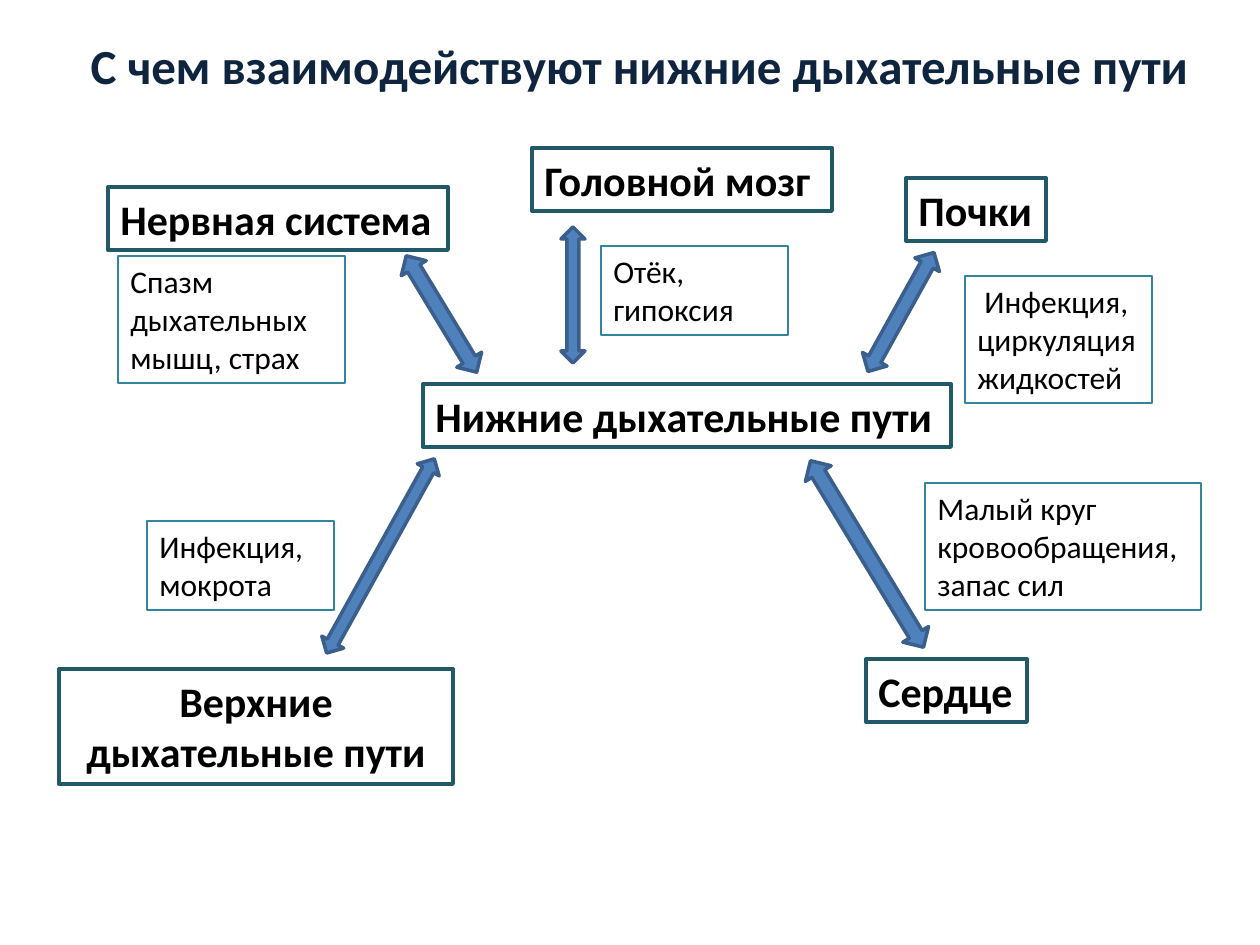
from pptx import Presentation
from pptx.dml.color import RGBColor
from pptx.enum.shapes import MSO_SHAPE
from pptx.enum.text import MSO_ANCHOR, MSO_AUTO_SIZE, PP_ALIGN
from pptx.util import Emu, Pt

ARROW = MSO_SHAPE.UP_DOWN_ARROW
TOP = MSO_ANCHOR.TOP
GROW = MSO_AUTO_SIZE.SHAPE_TO_FIT_TEXT
LEFT, CENTER = PP_ALIGN.LEFT, PP_ALIGN.CENTER

PX_PER_INCH = 126
PAGE_SIZE = (1260, 945)

# Text and line formats
TITLE = {"size": Pt(28), "bold": True, "name": "Calibri"}
ORGAN = {"size": Pt(24), "bold": True, "name": "Calibri"}
NOTE = {"size": Pt(18), "bold": False, "name": "Calibri"}
ORGAN_LINE = ("215968", 2.25)
NOTE_LINE = ("31859C", 0.75)
ARROW_LINE = ("3A5F8C", 2)

# Organs: text, (left, top, width, height), alignment
ORGANS = [
    ("Нижние дыхательные пути", (423, 384, 528, 63), LEFT),
    ("Нервная система", (108, 187, 340, 63), LEFT),
    ("Верхние дыхательные пути", (59, 669, 394, 115), CENTER),
    ("Сердце", (866, 659, 161, 63), LEFT),
    ("Почки", (906, 178, 140, 63), LEFT),
    ("Головной мозг", (532, 148, 300, 63), LEFT),
]

# Notes beside the arrows
NOTES = [
    ("Спазм дыхательных мышц, страх", (118, 256, 227, 127)),
    ("Инфекция, мокрота", (147, 521, 187, 89)),
    (" Инфекция, циркуляция жидкостей", (965, 276, 187, 127)),
    ("Малый круг кровообращения, запас сил", (925, 483, 276, 127)),
    ("Отёк, гипоксия", (601, 246, 187, 89)),
]

# Arrows: place before rotation, rotation in degrees
ARROWS = [
    ((427, 246, 29, 136), -31.2),
    ((368, 445, 25, 222), 29),
    ((852, 445, 30, 218), -31.2),
    ((887, 244, 28, 136), 29),
    ((561, 227, 24, 136), 0),
]


def px(length):
    return Emu(round(length * 914400 / PX_PER_INCH))


def colour(value):
    return RGBColor.from_string(value)


def set_line(shape, line):
    shape.line.color.rgb = colour(line[0])
    shape.line.width = Pt(line[1])


def write(box, text, style, text_colour, align):
    frame = box.text_frame
    frame.word_wrap = True
    frame.auto_size = GROW
    frame.vertical_anchor = TOP
    para = frame.paragraphs[0]
    para.alignment = align
    span = para.add_run()
    span.text = text
    for name, value in style.items():
        setattr(span.font, name, value)
    span.font.color.rgb = colour(text_colour)


def add_title(page, text, place):
    title = page.shapes.title
    title.left, title.top, title.width, title.height = map(px, place)
    write(title, text, TITLE, "0F243E", LEFT)


def add_box(page, text, place, style, line, align=LEFT):
    box = page.shapes.add_textbox(*map(px, place))
    set_line(box, line)
    write(box, text, style, "000000", align)


def add_arrow(page, place, rotation):
    arrow = page.shapes.add_shape(ARROW, *map(px, place))
    arrow.rotation = rotation
    arrow.shadow.inherit = False
    arrow.fill.solid()
    arrow.fill.fore_color.rgb = colour("4F81BD")
    set_line(arrow, ARROW_LINE)


def main():
    deck = Presentation()
    deck.slide_width, deck.slide_height = map(px, PAGE_SIZE)
    page = deck.slides.add_slide(deck.slide_layouts[5])

    add_title(page, "С чем взаимодействуют нижние дыхательные пути",
              (78, 29, 1134, 72))
    for text, place, align in ORGANS:
        add_box(page, text, place, ORGAN, ORGAN_LINE, align)
    for place, rotation in ARROWS:
        add_arrow(page, place, rotation)
    for text, place in NOTES:
        add_box(page, text, place, NOTE, NOTE_LINE)

    deck.save("out.pptx")


if __name__ == "__main__":
    main()
